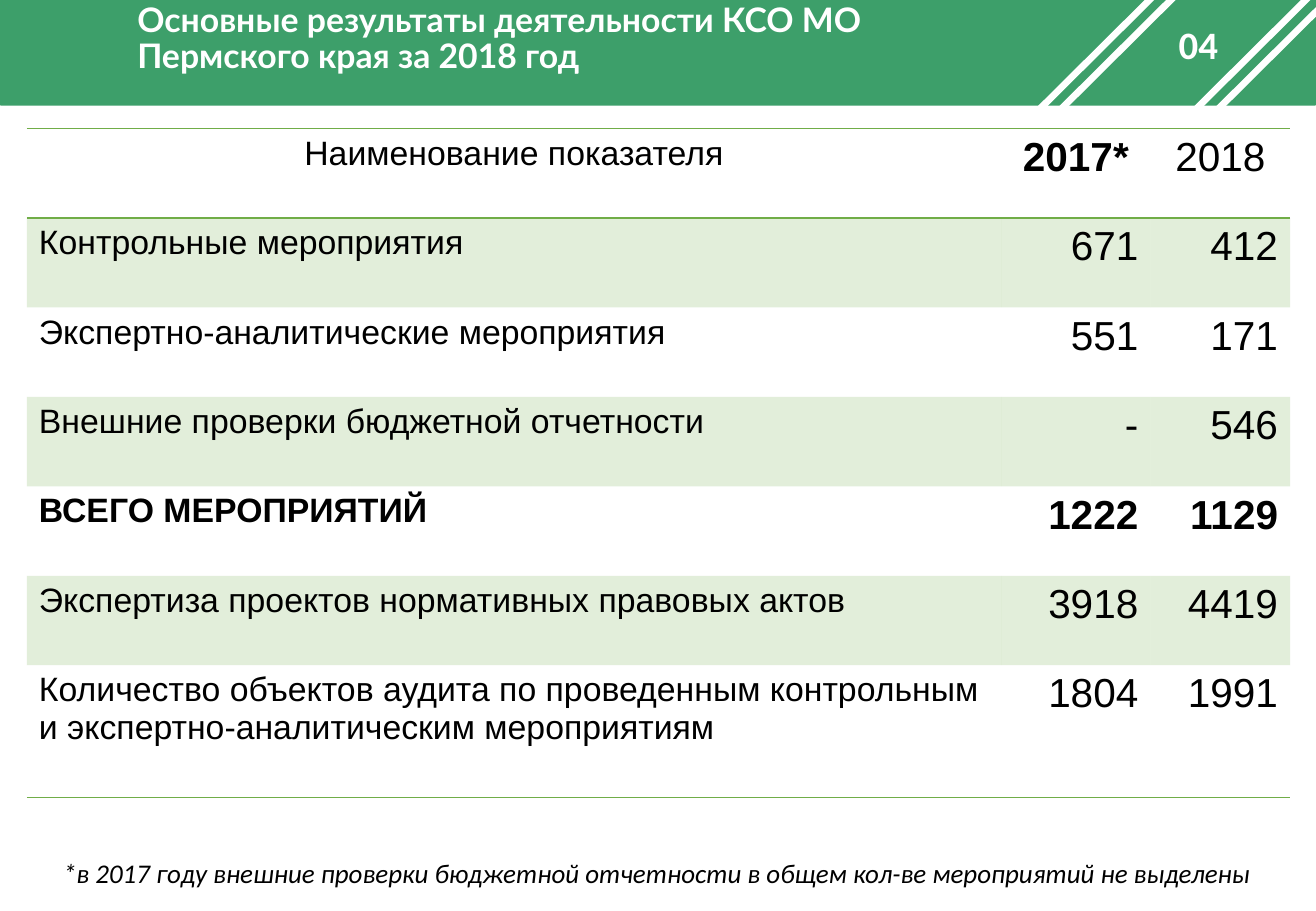
"""Builds the slide with the 2017-2018 results of the audit bodies."""
from dataclasses import dataclass
from typing import NamedTuple

from lxml.etree import SubElement
from pptx import Presentation
from pptx.dml.color import RGBColor
from pptx.enum.shapes import MSO_CONNECTOR as Connector, MSO_SHAPE as Shape
from pptx.enum.text import MSO_ANCHOR as Anchor, MSO_AUTO_SIZE as AutoSize, PP_ALIGN as Align
from pptx.oxml.ns import qn
from pptx.util import Cm, Pt


@dataclass(frozen=True)
class Theme:
    """Colours, fonts and type sizes of the slide."""
    banner: str = "3D9F6A"
    accent: str = "70AD47"
    light: str = "FFFFFF"
    dark: str = "000000"
    title_font: str = "Lato"
    note_font: str = "Calibri"
    table_font: str = "Arial"
    title_size: int = 20
    number_size: int = 23
    note_size: int = 16
    label_size: int = 20
    value_size: int = 24
    band_opacity: int = 20


class Box(NamedTuple):
    """Left, top, width and height in centimetres."""
    left: float
    top: float
    width: float
    height: float


class Stripe(NamedTuple):
    """Lower end of a diagonal stripe in centimetres."""
    left: float
    bottom: float


class Indicator(NamedTuple):
    """One table row."""
    label: str
    before: str
    now: str
    bold: bool = False


THEME = Theme()
STRIPES = [Stripe(21.87, 2.59), Stripe(24.69, 2.59), Stripe(24.79, 2.95), Stripe(21.06, 2.95)]
STRIPE_RUN, STRIPE_RISE = 3.53, 3.51
HEADER = Indicator("Наименование показателя", "2017*", "2018")
INDICATORS = [
    Indicator("Контрольные мероприятия", "671", "412"),
    Indicator("Экспертно-аналитические мероприятия", "551", "171"),
    Indicator("Внешние проверки бюджетной отчетности", "-", "546"),
    Indicator("ВСЕГО МЕРОПРИЯТИЙ", "1222", "1129", bold=True),
    Indicator("Экспертиза проектов нормативных правовых актов", "3918", "4419"),
    Indicator("Количество объектов аудита по проведенным контрольным "
              "и экспертно-аналитическим мероприятиям", "1804", "1991"),
]
COLUMN_WIDTHS = (20.37, 3.12, 2.92)
ROW_HEIGHT, LAST_ROW_HEIGHT = 1.87, 2.77
PLAIN_TABLE_STYLE = "{2D5ABB26-0587-4C30-8999-92F81FD0307C}"


def rgb(colour: str) -> RGBColor:
    """Turn a hex string into a colour."""
    return RGBColor.from_string(colour)


def lengths(box: Box) -> list[Cm]:
    """Convert a box to lengths."""
    return [Cm(side) for side in box]


def write(frame, text: str, *, font: str, size: int, colour: str = THEME.dark,
          bold: bool = False, italic: bool = False, align: Align = Align.LEFT):
    """Put formatted text into a frame and return its paragraph."""
    paragraph = frame.paragraphs[0]
    paragraph.alignment = align
    run = paragraph.add_run()
    run.text = text
    run.font.name, run.font.size = font, Pt(size)
    run.font.bold, run.font.italic = bold, italic
    run.font.color.rgb = rgb(colour)
    return paragraph


def set_frame(frame, anchor: Anchor = Anchor.TOP) -> None:
    """Give a text frame its wrapping, anchor and insets."""
    frame.word_wrap = True
    frame.auto_size = AutoSize.NONE
    frame.vertical_anchor = anchor
    frame.margin_left = frame.margin_right = Cm(0.13)
    frame.margin_top = frame.margin_bottom = Cm(0.13)


def add_text_frame(slide, box: Box):
    """Add a text box and return its frame."""
    frame = slide.shapes.add_textbox(*lengths(box)).text_frame
    set_frame(frame)
    return frame


def add_banner(slide) -> None:
    """Draw the green banner."""
    banner = slide.shapes.add_shape(Shape.ROUNDED_RECTANGLE, *lengths(Box(0, -0.1, 27.51, 2.31)))
    banner.adjustments[0] = 0.01
    banner.fill.solid()
    banner.fill.fore_color.rgb = rgb(THEME.banner)
    banner.line.fill.background()
    banner.shadow.inherit = False


def add_number(slide) -> None:
    """Write the slide number in the banner."""
    frame = add_text_frame(slide, Box(23.24, 0.3, 2.51, 1.24))
    paragraph = write(frame, "04", font=THEME.note_font, size=THEME.number_size,
                      colour=THEME.light, bold=True)
    paragraph.level = 1
    properties = paragraph._p.get_or_add_pPr()
    properties.set("marL", "0")
    properties.set("indent", str(Cm(1.27)))


def add_stripe(slide, stripe: Stripe) -> None:
    """Draw one diagonal stripe over the banner."""
    line = slide.shapes.add_connector(
        Connector.STRAIGHT, Cm(stripe.left), Cm(stripe.bottom),
        Cm(stripe.left + STRIPE_RUN), Cm(stripe.bottom - STRIPE_RISE))
    line.line.color.rgb = rgb(THEME.light)
    line.line.width = Pt(4)
    SubElement(line._element.spPr, qn("a:effectLst"))


def place_title(slide) -> None:
    """Move the title onto the banner and fill it."""
    title = slide.shapes.title
    title.left, title.top, title.width, title.height = lengths(Box(2.74, -0.25, 18.92, 2.16))
    set_frame(title.text_frame, Anchor.MIDDLE)
    paragraph = write(title.text_frame, "Основные результаты деятельности КСО МО Пермского края за 2018 год",
                      font=THEME.title_font, size=THEME.title_size, colour=THEME.light, bold=True)
    paragraph.line_spacing = 0.9
    paragraph.space_before = Pt(10)
    slide.shapes._spTree.append(title._element)


def style_cell(cell, edges: tuple[str, ...], banded: bool) -> None:
    """Set the borders and the band fill of a cell."""
    properties = cell._tc.get_or_add_tcPr()
    for edge in edges:
        border = SubElement(properties, qn(f"a:{edge}"), w=str(Pt(1)))
        SubElement(SubElement(border, qn("a:solidFill")), qn("a:srgbClr"), val=THEME.accent)
    if not banded:
        cell.fill.background()
        return
    cell.fill.solid()
    cell.fill.fore_color.rgb = rgb(THEME.accent)
    band = properties.find(qn("a:solidFill")).find(qn("a:srgbClr"))
    SubElement(band, qn("a:alpha"), val=str(THEME.band_opacity * 1000))


def add_results(slide) -> None:
    """Build the table of indicators."""
    rows = [HEADER, *INDICATORS]
    last = len(rows) - 1
    box = Box(0.56, 2.69, sum(COLUMN_WIDTHS), ROW_HEIGHT * last + LAST_ROW_HEIGHT)
    table = slide.shapes.add_table(len(rows), len(COLUMN_WIDTHS), *lengths(box)).table
    table.first_row = table.horz_banding = False
    table._tbl.tblPr.find(qn("a:tableStyleId")).text = PLAIN_TABLE_STYLE
    for column, width in zip(table.columns, COLUMN_WIDTHS):
        column.width = Cm(width)
    edges = {0: ("lnT", "lnB"), last: ("lnB",)}
    for row, indicator in enumerate(rows):
        table.rows[row].height = Cm(LAST_ROW_HEIGHT if row == last else ROW_HEIGHT)
        for column, text in enumerate(indicator[:3]):
            cell = table.cell(row, column)
            side = Align.RIGHT if column else Align.LEFT
            write(cell.text_frame, text, font=THEME.table_font,
                  size=THEME.value_size if column else THEME.label_size,
                  bold=indicator.bold or text == HEADER.before,
                  align=side if row else Align.CENTER)
            style_cell(cell, edges.get(row, ()), banded=row % 2 == 1)


def main() -> None:
    """Build and save the slide."""
    deck = Presentation()
    deck.slide_width, deck.slide_height = Cm(27.51), Cm(19.05)
    slide = deck.slides.add_slide(deck.slide_layouts.get_by_name("Title Only"))
    add_banner(slide)
    add_number(slide)
    for stripe in STRIPES:
        add_stripe(slide, stripe)
    place_title(slide)
    write(add_text_frame(slide, Box(1.19, 17.78, 27.51, 0.94)),
          "*в 2017 году внешние проверки бюджетной отчетности в общем кол-ве мероприятий не выделены",
          font=THEME.note_font, size=THEME.note_size, italic=True)
    add_results(slide)
    deck.save("out.pptx")


if __name__ == "__main__":
    main()
